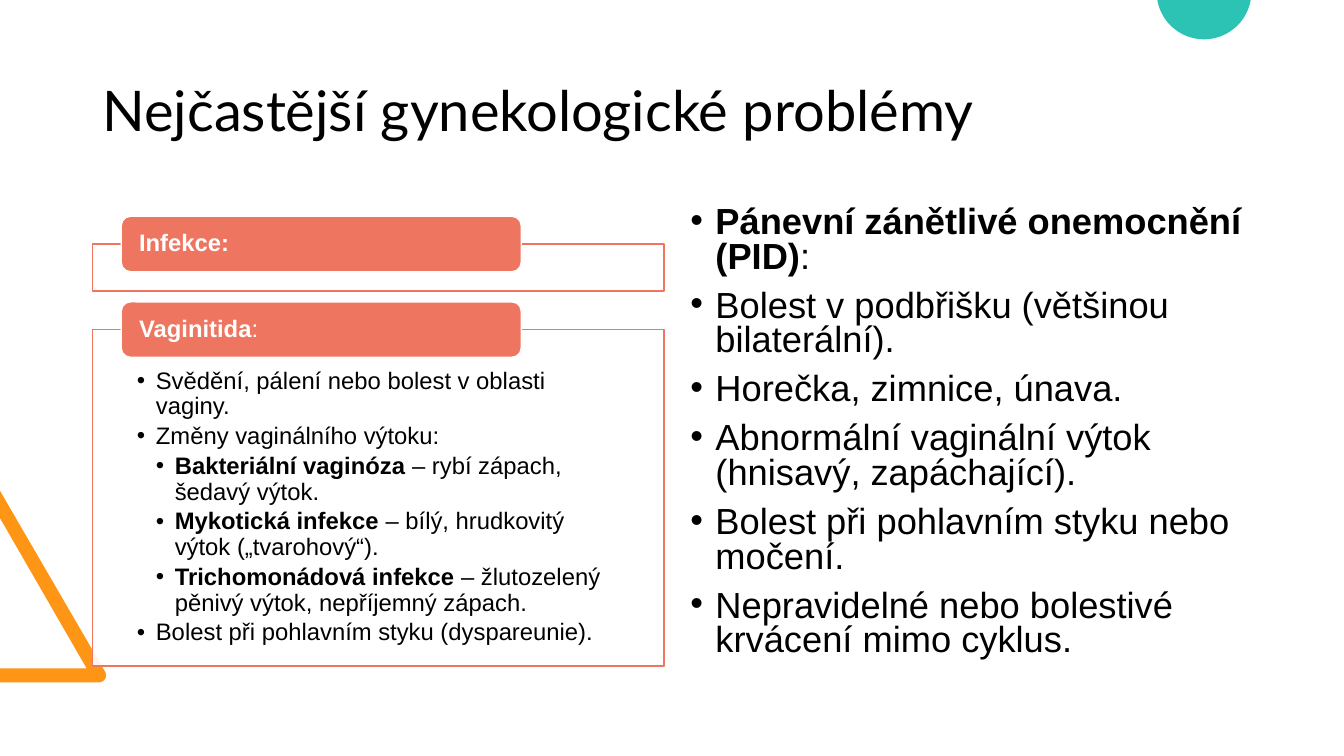
import math

import pptx
import pptx.dml.color
import pptx.enum.shapes
import pptx.enum.text
import pptx.oxml
import pptx.oxml.ns
import pptx.util

Pt = pptx.util.Pt
SHAPES = pptx.enum.shapes.MSO_SHAPE
MIDDLE = pptx.enum.text.MSO_ANCHOR.MIDDLE
TOP = pptx.enum.text.MSO_ANCHOR.TOP

BLACK, WHITE = "000000", "FFFFFF"
CORAL, ORANGE, TEAL = "EE7661", "FF9514", "2CC3B4"

PANEL_LEFT, PANEL_WIDTH = 66.2, 408.2

# Each paragraph is (indent level, bold start, regular remainder).
VAGINITIS = [
    (1, "", "Svědění, pálení nebo bolest v oblasti vaginy."),
    (1, "", "Změny vaginálního výtoku:"),
    (2, "Bakteriální vaginóza", " – rybí zápach, šedavý výtok."),
    (2, "Mykotická infekce", " – bílý, hrudkovitý výtok („tvarohový“)."),
    (2, "Trichomonádová infekce", " – žlutozelený pěnivý výtok, nepříjemný zápach."),
    (1, "", "Bolest při pohlavním styku (dyspareunie)."),
]
PELVIC_INFLAMMATION = [
    (1, "Pánevní zánětlivé onemocnění (PID)", ":"),
    (1, "", "Bolest v podbřišku (většinou bilaterální)."),
    (1, "", "Horečka, zimnice, únava."),
    (1, "", "Abnormální vaginální výtok (hnisavý, zapáchající)."),
    (1, "", "Bolest při pohlavním styku nebo močení."),
    (1, "", "Nepravidelné nebo bolestivé krvácení mimo cyklus."),
]


def rgb(color):
    return pptx.dml.color.RGBColor.from_string(color)


def add_bullet(paragraph, level, indent):
    properties = paragraph._p.get_or_add_pPr()
    properties.set("marL", str(Pt(indent * level)))
    properties.set("indent", str(-Pt(indent)))
    for tag, attribute, value in (("a:buFont", "typeface", "Arial"), ("a:buChar", "char", "•")):
        element = pptx.oxml.parse_xml(f"<{tag} {pptx.oxml.ns.nsdecls('a')}/>")
        element.set(attribute, value)
        properties.append(element)


def write_text(shape, paragraphs, size, color=BLACK, font="Arial", anchor=TOP,
               margins=(7.2, 3.6, 7.2, 3.6), indent=0, line_spacing=0.9, gap=0):
    """Fill a shape with paragraphs; a nonzero indent gives them bullets."""
    frame = shape.text_frame
    frame.word_wrap = True
    frame.vertical_anchor = anchor
    (frame.margin_left, frame.margin_top,
     frame.margin_right, frame.margin_bottom) = map(Pt, margins)
    for index, (level, bold_text, regular_text) in enumerate(paragraphs):
        paragraph = frame.add_paragraph() if index else frame.paragraphs[0]
        paragraph.alignment = pptx.enum.text.PP_ALIGN.LEFT
        paragraph.line_spacing = line_spacing
        if index:
            paragraph.space_before = Pt(gap)
        if indent:
            add_bullet(paragraph, level, indent)
        for text, bold in ((bold_text, True), (regular_text, False)):
            if text:
                run = paragraph.add_run()
                run.text = text
                run.font.name = font
                run.font.size = Pt(size)
                run.font.bold = bold
                run.font.color.rgb = rgb(color)


def add_text(slide, left, top, width, height, paragraphs, **text_format):
    box = slide.shapes.add_textbox(Pt(left), Pt(top), Pt(width), Pt(height))
    write_text(box, paragraphs, **text_format)


def add_box(slide, preset, left, top, width, height, fill, line):
    shape = slide.shapes.add_shape(preset, Pt(left), Pt(top), Pt(width), Pt(height))
    shape.shadow.inherit = False
    shape.fill.solid()
    shape.fill.fore_color.rgb = rgb(fill)
    shape.line.color.rgb = rgb(line)
    shape.line.width = Pt(1)
    return shape


def set_opacity(shape, percent):
    color = shape._element.spPr.find(".//" + pptx.oxml.ns.qn("a:srgbClr"))
    alpha = pptx.oxml.parse_xml(f"<a:alpha {pptx.oxml.ns.nsdecls('a')}/>")
    alpha.set("val", str(percent * 1000))
    color.append(alpha)


def add_panel(slide, top, height, heading, paragraphs=()):
    panel = add_box(slide, SHAPES.RECTANGLE, PANEL_LEFT, top, PANEL_WIDTH, height, WHITE, CORAL)
    set_opacity(panel, 90)
    write_text(panel, paragraphs, size=17, margins=(31.7, 28.1, 31.7, 9.4), indent=13.5, gap=2.9)
    tab = add_box(slide, SHAPES.ROUNDED_RECTANGLE, PANEL_LEFT + 20.4, top - 19.7,
                  285.7, 39.6, CORAL, WHITE)
    write_text(tab, [heading], size=17, color=WHITE, anchor=MIDDLE, margins=(10.8, 0, 10.8, 0))


def arc(center_x, center_y, radius, start, end, steps=40):
    """Points along a circle, with angles in degrees clockwise from the right."""
    angles = [math.radians(start + (end - start) * step / steps) for step in range(steps + 1)]
    return [(center_x + radius * math.cos(angle), center_y + radius * math.sin(angle))
            for angle in angles]


def add_outline(slide, points, fill):
    corners = [(Pt(x), Pt(y)) for x, y in points]
    builder = slide.shapes.build_freeform(*corners[0])
    builder.add_line_segments(corners[1:], close=True)
    shape = builder.convert_to_shape()
    shape.shadow.inherit = False
    shape.fill.solid()
    shape.fill.fore_color.rgb = rgb(fill)
    shape.line.fill.background()


def main():
    presentation = pptx.Presentation()
    presentation.slide_width, presentation.slide_height = Pt(960), Pt(540)
    slide = presentation.slides.add_slide(presentation.slide_layouts[6])

    triangle = [(0, 487.4), (0, 477.4), (61.9, 477.4), (0, 370.1), (0, 350.6)]
    add_outline(slide, triangle + arc(70.8, 482.4, 5, -30, 90), ORANGE)
    add_outline(slide, arc(860, -5.7, 33.8, 9.7, 170.3), TEAL)

    add_text(slide, 66.2, 28.8, 828, 104.4, [(1, "", "Nejčastější gynekologické problémy")],
             size=40, font="Lato", anchor=MIDDLE)
    add_panel(slide, 174.2, 33.8, (1, "Infekce:", ""))
    add_panel(slide, 235.3, 240.5, (1, "Vaginitida", ":"), VAGINITIS)
    add_text(slide, 486, 144, 408.2, 342.7, PELVIC_INFLAMMATION,
             size=25.9, indent=18, line_spacing=0.8, gap=10)

    presentation.save("out.pptx")


if __name__ == "__main__":
    main()
